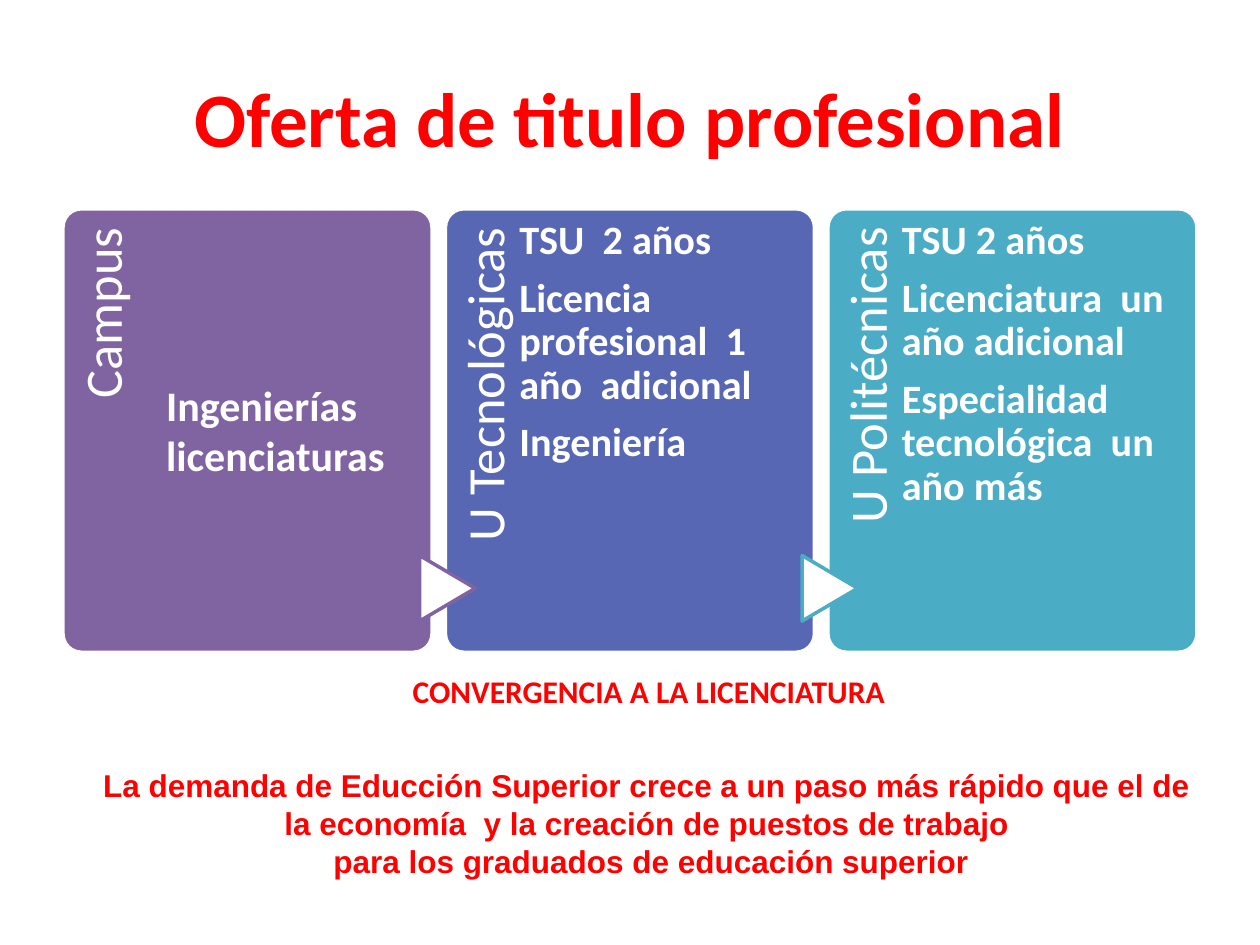
from pptx import Presentation
from pptx.dml.color import RGBColor
from pptx.enum.shapes import MSO_SHAPE
from pptx.enum.text import MSO_ANCHOR, PP_ALIGN
from pptx.util import Cm, Pt

RED = RGBColor(0xFF, 0x00, 0x00)
WHITE = RGBColor(0xFF, 0xFF, 0xFF)
PURPLE = RGBColor(0x80, 0x64, 0xA2)
BLUE = RGBColor(0x57, 0x67, 0xB4)
TEAL = RGBColor(0x4B, 0xAC, 0xC6)


def write(tf, lines, size, color, bold=True, font="Calibri",
          align=PP_ALIGN.LEFT, spacing=None, after=None):
    for i, line in enumerate(lines):
        p = tf.paragraphs[0] if i == 0 else tf.add_paragraph()
        p.alignment = align
        p.line_spacing = spacing
        p.space_after = after
        r = p.add_run()
        r.text = line
        r.font.name = font
        r.font.size = Pt(size)
        r.font.bold = bold
        r.font.color.rgb = color


def add_box(s, left, top, width, height, insets=None, wrap=True):
    sp = s.shapes.add_textbox(Cm(left), Cm(top), Cm(width), Cm(height))
    tf = sp.text_frame
    tf.word_wrap = wrap
    if insets:
        tf.margin_left, tf.margin_top, tf.margin_right, tf.margin_bottom = map(Cm, insets)
    return sp


prs = Presentation()
prs.slide_width, prs.slide_height = Cm(25.4), Cm(19.05)
s = prs.slides.add_slide(prs.slide_layouts[5])

# Title
title = s.shapes.title
title.left, title.top, title.width, title.height = Cm(1.27), Cm(0.76), Cm(22.86), Cm(3.18)
title.text_frame.vertical_anchor = MSO_ANCHOR.MIDDLE
write(title.text_frame, ["Oferta de titulo profesional"], 44, RED, align=PP_ALIGN.CENTER)

# Cards: name, fill, outline of the arrow leading in, body
cards = [
    ("Campus", PURPLE, None, []),
    ("U Tecnológicas", BLUE, PURPLE,
     ["TSU  2 años", "Licencia profesional  1 año  adicional", "Ingeniería"]),
    ("U Politécnicas", TEAL, TEAL,
     ["TSU 2 años", "Licenciatura  un año adicional",
      "Especialidad tecnológica  un año más"]),
]
CARD_TOP, CARD_W, CARD_H, STEP = 4.21, 7.44, 8.94, 7.71

for i, (name, fill, arrow_line, body) in enumerate(cards):
    left = 1.27 + i * STEP
    card = s.shapes.add_shape(MSO_SHAPE.ROUNDED_RECTANGLE, Cm(left), Cm(CARD_TOP),
                              Cm(CARD_W), Cm(CARD_H))
    card.adjustments[0] = 0.05
    shapes = [(card, fill, WHITE)]

    # Vertical name
    label = add_box(s, left - 2.92, 7.12, 7.32, 1.49, (0, 0.28, 0.38, 0))
    label.rotation = 270
    write(label.text_frame, [name], 30, WHITE, bold=False,
          align=PP_ALIGN.RIGHT, spacing=0.9)

    # Arrow from the previous card
    if arrow_line:
        arrow = s.shapes.add_shape(MSO_SHAPE.FLOWCHART_EXTRACT, Cm(left - 0.62), Cm(11.3),
                                   Cm(1.32), Cm(1.12))
        arrow.rotation = 90
        shapes.append((arrow, WHITE, arrow_line))

    for sp, inside, outline in shapes:
        sp.shadow.inherit = False
        sp.fill.solid()
        sp.fill.fore_color.rgb = inside
        sp.line.color.rgb = outline
        sp.line.width = Pt(2)

    # Body
    if body:
        box = add_box(s, left + 1.49, CARD_TOP, 5.54, CARD_H, (0, 0.23, 0, 0))
        write(box.text_frame, body, 23, WHITE, spacing=0.9, after=Pt(8))

# Degrees of the first card
box = add_box(s, 3.1, 7.52, 4.98, 2.31, wrap=False)
write(box.text_frame, ["Ingenierías", "licenciaturas"], 24, WHITE)

# Closing statements
box = add_box(s, 8.07, 13.42, 10.11, 1.02, wrap=False)
write(box.text_frame, ["CONVERGENCIA A LA LICENCIATURA"], 18, RED)

box = add_box(s, 1.72, 15.32, 22.81, 2.57, wrap=False)
write(box.text_frame,
      ["La demanda de Educción Superior crece a un paso más rápido que el de ",
       "la economía  y la creación de puestos de trabajo ",
       "para los graduados de educación superior"],
      18, RED, font="Arial", align=PP_ALIGN.CENTER)

prs.save("out.pptx")
